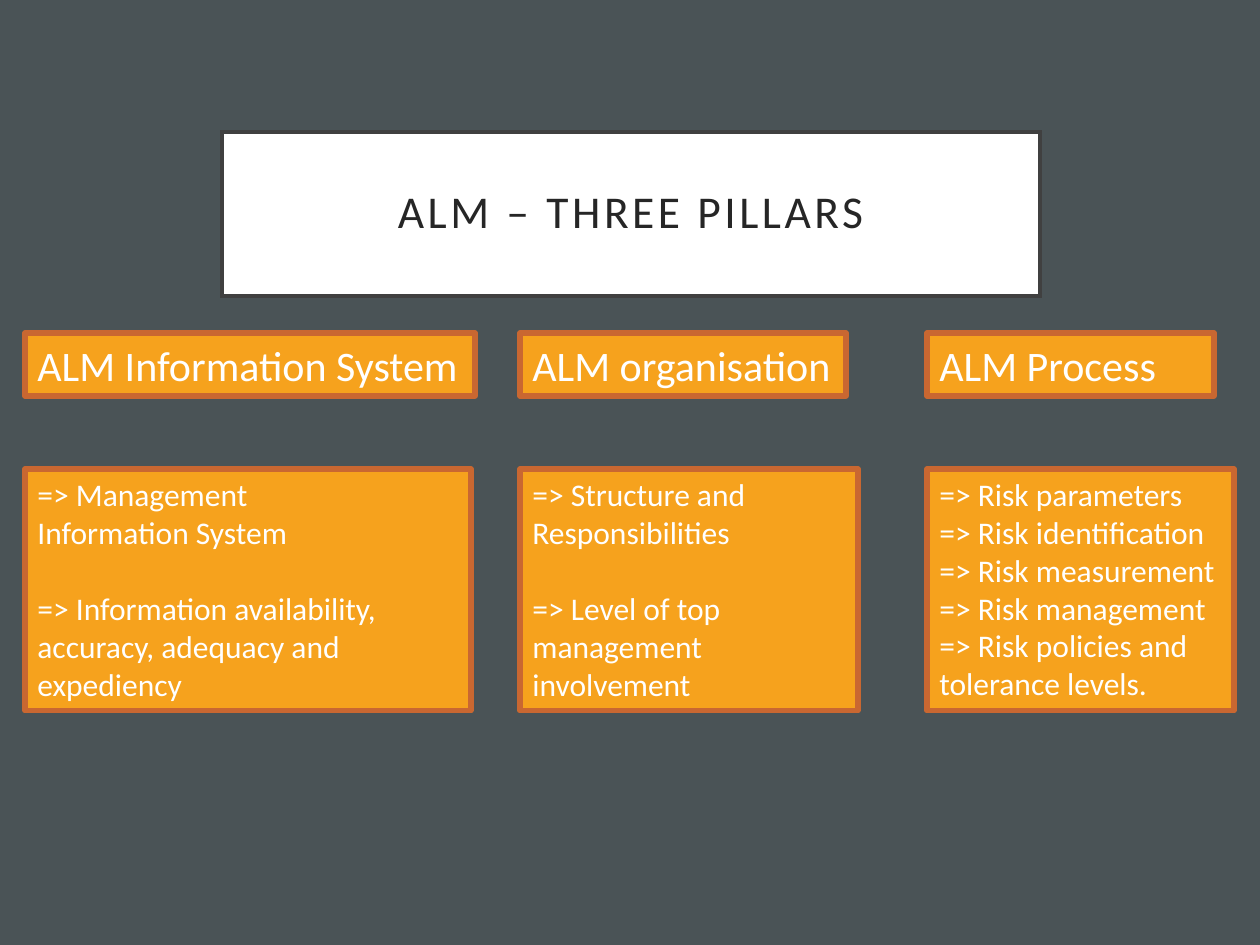
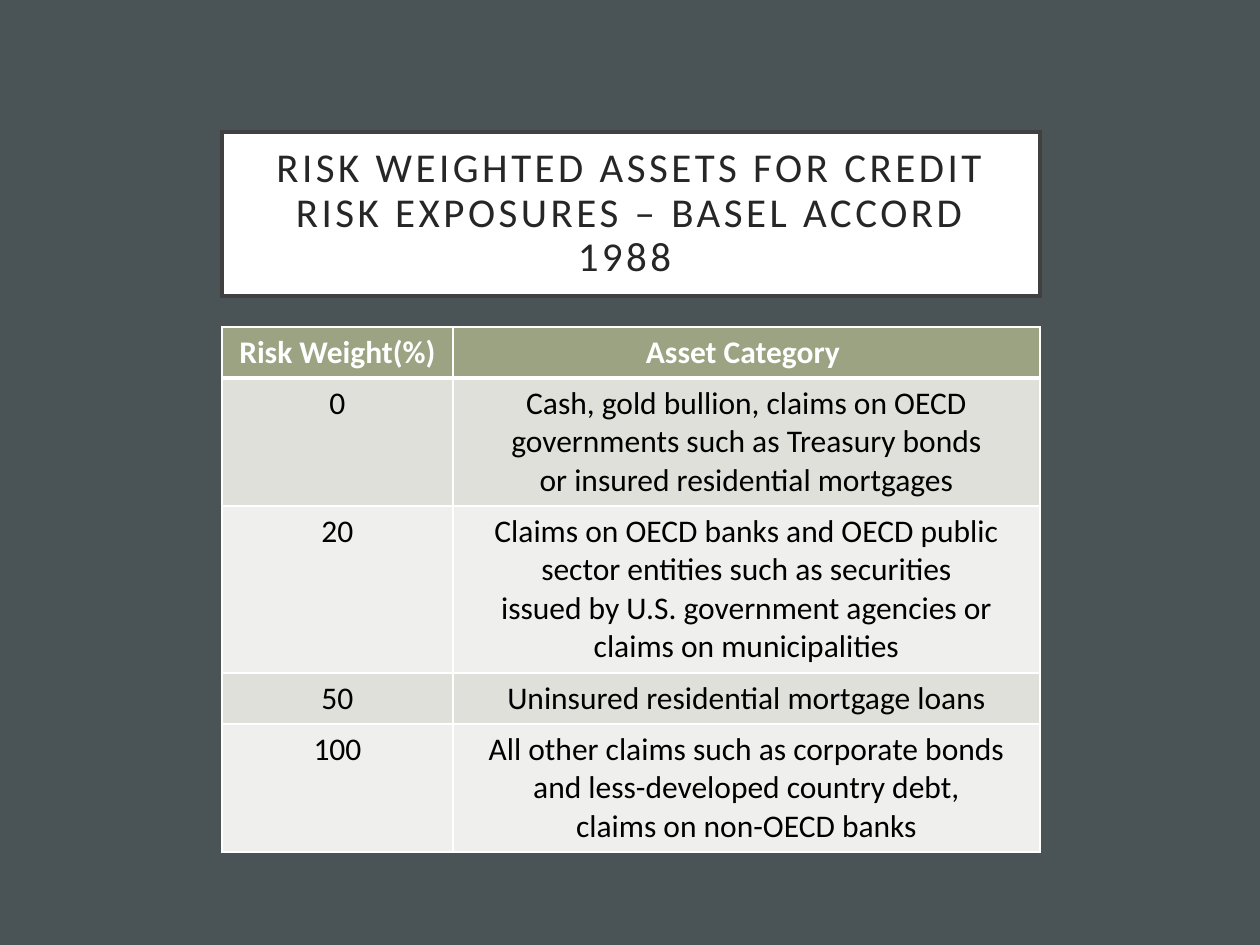
from lxml import etree
from pptx import Presentation
from pptx import util as u
from pptx.dml.color import RGBColor
from pptx.enum import shapes, text
from pptx.oxml import ns

EMU_PER_PX = 914400 / 126
FONT = "Calibri"
SLATE = RGBColor(0x4A, 0x53, 0x56)
WHITE = RGBColor(0xFF, 0xFF, 0xFF)
BLACK = RGBColor(0x00, 0x00, 0x00)
INK = RGBColor(0x26, 0x26, 0x26)
FRAME = RGBColor(0x40, 0x40, 0x40)
ORANGE = RGBColor(0xF6, 0xA2, 0x1D)
RUST = RGBColor(0xC9, 0x67, 0x31)
SAGE = RGBColor(0x9C, 0xA3, 0x83)
BANDS = (RGBColor(0xDE, 0xE0, 0xD9), RGBColor(0xEF, 0xF0, 0xED))

HEADING_TOP, HEADING_HEIGHT = 333, 63
DETAIL_TOP, DETAIL_HEIGHT = 469, 242
PILLARS = [
    (25, 450, 446, "ALM Information System",
     [["=> Management", "Information System"],
      ["=> Information availability, accuracy, adequacy and expediency"]]),
    (520, 326, 338, "ALM organisation",
     [["=> Structure and Responsibilities"],
      ["=> Level of top management involvement"]]),
    (927, 287, 307, "ALM Process",
     [["=> Risk parameters", "=> Risk identification", "=> Risk measurement",
       "=> Risk management", "=> Risk policies and tolerance levels."]]),
]

COLUMN_WIDTHS = (231, 587)
RISK_WEIGHTS = [
    (51, "Risk Weight(%)", ["Asset Category "]),
    (128, "0", ["Cash, gold bullion, claims on OECD governments such as Treasury bonds",
                "or insured residential mortgages"]),
    (167, "20", ["Claims on OECD banks and OECD public sector entities such as securities",
                 "issued by U.S. government agencies or claims on municipalities"]),
    (51, "50", ["Uninsured residential mortgage loans"]),
    (128, "100", ["All other claims such as corporate bonds and less-developed country debt,",
                  "claims on non-OECD banks"]),
]


def px(length):
    return u.Emu(round(length * EMU_PER_PX))


def write_paragraphs(frame, lines, size, color, align=text.PP_ALIGN.LEFT, bold=False):
    frame.text = "\n".join(lines)
    for paragraph in frame.paragraphs:
        paragraph.alignment = align
        paragraph.font.name = FONT
        paragraph.font.size = u.Pt(size)
        paragraph.font.bold = bold
        paragraph.font.color.rgb = color


def add_box(slide, left, top, width, height, fill, line, line_width):
    box = slide.shapes.add_shape(shapes.MSO_SHAPE.RECTANGLE,
                                 px(left), px(top), px(width), px(height))
    box.shadow.inherit = False
    box.fill.solid()
    box.fill.fore_color.rgb = fill
    box.line.color.rgb = line
    box.line.width = u.Pt(line_width)
    box.text_frame.word_wrap = True
    return box


def add_titled_slide(presentation, title, size):
    slide = presentation.slides.add_slide(presentation.slide_layouts[6])
    slide.background.fill.solid()
    slide.background.fill.fore_color.rgb = SLATE
    box = add_box(slide, 222, 132, 818, 164, WHITE, FRAME, 2.5)
    outline = box.line.fill._xPr
    etree.SubElement(outline, ns.qn("a:miter"), lim="800000")
    frame = box.text_frame
    frame.vertical_anchor = text.MSO_ANCHOR.MIDDLE
    frame.margin_left = frame.margin_right = u.Inches(0.2)
    frame.margin_top = frame.margin_bottom = u.Inches(0.2)
    write_paragraphs(frame, [title], size, INK, text.PP_ALIGN.CENTER)
    paragraph = frame.paragraphs[0]
    paragraph.line_spacing = 0.9
    paragraph.runs[0]._r.get_or_add_rPr().set("spc", "200")
    return slide


def add_card(slide, left, top, width, height, groups, size):
    frame = add_box(slide, left, top, width, height, ORANGE, RUST, 3).text_frame
    frame.vertical_anchor = text.MSO_ANCHOR.TOP
    write_paragraphs(frame, [line for group in groups for line in group], size, WHITE)
    start = 0
    for group in groups[:-1]:
        start += len(group)
        frame.paragraphs[start].space_before = u.Pt(22)
    return frame


def add_pillar(slide, left, heading_width, detail_width, heading, groups):
    frame = add_card(slide, left, HEADING_TOP, heading_width, HEADING_HEIGHT, [[heading]], 24)
    frame.word_wrap = False
    add_card(slide, left, DETAIL_TOP, detail_width, DETAIL_HEIGHT, groups, 18)


def set_borders(cell, **widths):
    properties = cell._tc.get_or_add_tcPr()
    for side in "LRTB":
        border = etree.SubElement(properties, ns.qn(f"a:ln{side}"),
                                  w=str(u.Pt(widths.get(side, 1))))
        fill = etree.SubElement(border, ns.qn("a:solidFill"))
        etree.SubElement(fill, ns.qn("a:srgbClr"), val=str(WHITE))


def add_weight_table(slide, left, top):
    heights = [row[0] for row in RISK_WEIGHTS]
    table = slide.shapes.add_table(len(heights), len(COLUMN_WIDTHS), px(left), px(top),
                                   px(sum(COLUMN_WIDTHS)), px(sum(heights))).table
    table.horz_banding = False
    for column, width in zip(table.columns, COLUMN_WIDTHS):
        column.width = px(width)
    for index, (height, weight, category) in enumerate(RISK_WEIGHTS):
        table.rows[index].height = px(height)
        header = index == 0
        for cell, lines in zip(table.rows[index].cells, ([weight], category)):
            set_borders(cell, T=3 if index == 1 else 1, B=3 if header else 1)
            cell.fill.solid()
            cell.fill.fore_color.rgb = SAGE if header else BANDS[(index - 1) % 2]
            write_paragraphs(cell.text_frame, lines, 18, WHITE if header else BLACK,
                             text.PP_ALIGN.CENTER, header)


def main():
    presentation = Presentation()
    presentation.slide_width = px(1260)
    presentation.slide_height = px(945)

    pillars_slide = add_titled_slide(presentation, "ALM – THREE PILLARS", 26)
    for pillar in PILLARS:
        add_pillar(pillars_slide, *pillar)

    weights_slide = add_titled_slide(
        presentation,
        "RISK WEIGHTED ASSETS FOR CREDIT RISK EXPOSURES – BASEL ACCORD 1988 ", 23.4)
    add_weight_table(weights_slide, 222, 327)

    presentation.save("out.pptx")


if __name__ == "__main__":
    main()
